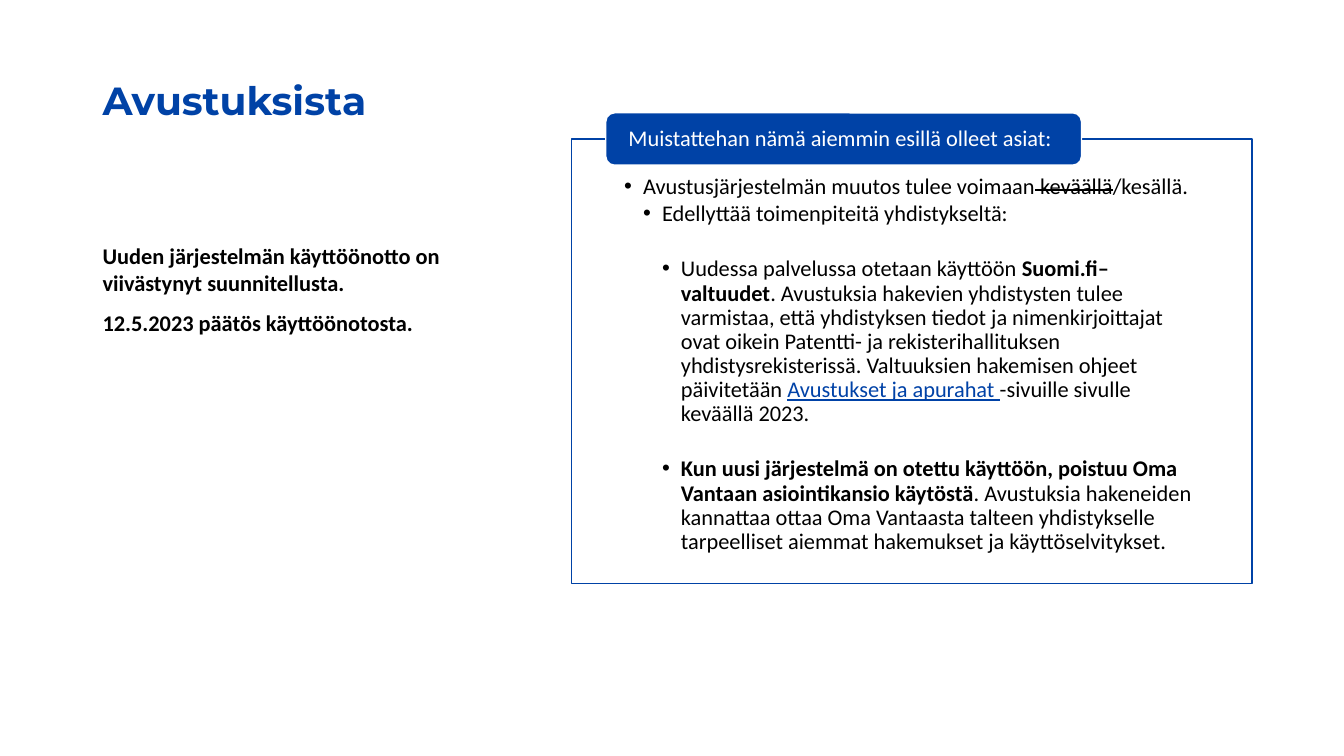
from dataclasses import dataclass

from lxml.etree import SubElement
from pptx import Presentation
from pptx.dml.color import RGBColor
from pptx.enum.shapes import MSO_SHAPE as Preset
from pptx.enum.text import MSO_ANCHOR as Anchor, MSO_AUTO_SIZE as AutoSize, PP_ALIGN as Align
from pptx.oxml.ns import qn
from pptx.util import Pt

BLUE = RGBColor(0x00, 0x42, 0xA6)
LINK_BLUE = RGBColor(0x00, 0x42, 0xA7)
BLACK = RGBColor(0x00, 0x00, 0x00)
WHITE = RGBColor(0xFF, 0xFF, 0xFF)
BODY_FONT = "Calibri"
BODY_SIZE = 16
INDENT = 13.5


@dataclass(frozen=True)
class Span:
    text: str
    bold: bool = False
    strike: bool = False
    link: bool = False


@dataclass(frozen=True)
class Bullet:
    level: int
    spans: tuple[Span, ...]
    space_before: float = 0


@dataclass(frozen=True)
class Panel:
    preset: Preset
    box: tuple[float, float, float, float]
    fill: RGBColor
    line: RGBColor
    insets: tuple[float, float, float, float]
    anchor: Anchor


REMINDER_PANEL = Panel(Preset.RECTANGLE, (408.2, 99.4, 486, 317.5), WHITE, BLUE,
                       (37.7, 26, 37.7, 8.5), Anchor.TOP)
HEADING_PANEL = Panel(Preset.ROUNDED_RECTANGLE, (432.7, 80.6, 339.8, 37.4), BLUE, WHITE,
                      (14.4, 0, 14.4, 0), Anchor.MIDDLE)

DELAY_NOTES = (
    "Uuden järjestelmän käyttöönotto on viivästynyt suunnitellusta.",
    "12.5.2023 päätös käyttöönotosta.",
)

REMINDERS = (
    Bullet(1, (
        Span("Avustusjärjestelmän muutos tulee voimaan"),
        Span(" keväällä", strike=True),
        Span("/kesällä."),
    )),
    Bullet(2, (Span("Edellyttää toimenpiteitä yhdistykseltä:"),)),
    Bullet(3, (
        Span("Uudessa palvelussa otetaan käyttöön "),
        Span("Suomi.fi–valtuudet", bold=True),
        Span(". Avustuksia hakevien yhdistysten tulee varmistaa, että yhdistyksen tiedot ja "
             "nimenkirjoittajat ovat oikein Patentti- ja rekisterihallituksen "
             "yhdistysrekisterissä. Valtuuksien hakemisen ohjeet päivitetään "),
        Span("Avustukset ja apurahat ", link=True),
        Span("-sivuille sivulle keväällä 2023."),
    ), space_before=20),
    Bullet(3, (
        Span("Kun uusi järjestelmä on otettu käyttöön, poistuu Oma Vantaan asiointikansio "
             "käytöstä", bold=True),
        Span(". Avustuksia hakeneiden kannattaa ottaa Oma Vantaasta talteen yhdistykselle "
             "tarpeelliset aiemmat hakemukset ja käyttöselvitykset."),
    ), space_before=20),
)


def style_font(font, color: RGBColor, bold: bool = False,
               name: str = BODY_FONT, size: float = BODY_SIZE) -> None:
    font.name, font.size, font.bold = name, Pt(size), bold
    font.color.rgb = color


def add_panel(slide, panel: Panel):
    shape = slide.shapes.add_shape(panel.preset, *map(Pt, panel.box))
    shape.shadow.inherit = False
    shape.fill.solid()
    shape.fill.fore_color.rgb = panel.fill
    shape.line.color.rgb = panel.line
    shape.line.width = Pt(1)
    frame = shape.text_frame
    frame.word_wrap = True
    frame.vertical_anchor = panel.anchor
    (frame.margin_left, frame.margin_top,
     frame.margin_right, frame.margin_bottom) = map(Pt, panel.insets)
    return shape


def write_bullet(paragraph, bullet: Bullet) -> None:
    properties = paragraph._p.get_or_add_pPr()
    properties.set("marL", str(Pt(INDENT * bullet.level)))
    properties.set("indent", str(-Pt(INDENT)))
    SubElement(properties, qn("a:buFont"), typeface="Arial")
    SubElement(properties, qn("a:buChar"), char="•")
    paragraph.alignment = Align.LEFT
    paragraph.line_spacing = 0.9
    paragraph.space_after = Pt(2)
    if bullet.space_before:
        paragraph.space_before = Pt(bullet.space_before)
    for span in bullet.spans:
        run = paragraph.add_run()
        run.text = span.text
        style_font(run.font, LINK_BLUE if span.link else BLACK, span.bold)
        run.font.underline = span.link
        if span.strike:
            run._r.get_or_add_rPr().set("strike", "sngStrike")


def add_title(slide) -> None:
    title = slide.shapes.title
    title.left, title.top, title.width, title.height = map(Pt, (66.2, 39.6, 309.6, 51.8))
    frame = title.text_frame
    frame.text = "Avustuksista"
    frame.auto_size = AutoSize.NONE
    frame.vertical_anchor = Anchor.BOTTOM
    heading = frame.paragraphs[0]
    heading.alignment = Align.LEFT
    style_font(heading.runs[0].font, BLUE, True, "Montserrat", 28)


def add_delay_notes(slide) -> None:
    notes = slide.shapes.add_textbox(*map(Pt, (66.2, 169.2, 309.6, 293))).text_frame
    notes.word_wrap = True
    notes.text = "\n".join(DELAY_NOTES)
    for index, paragraph in enumerate(notes.paragraphs):
        if index:
            paragraph.space_before = Pt(10)
        style_font(paragraph.runs[0].font, BLACK, True)


def add_reminders(slide) -> None:
    panel = add_panel(slide, REMINDER_PANEL)
    fill_color = panel._element.spPr.find(f"{qn('a:solidFill')}/{qn('a:srgbClr')}")
    SubElement(fill_color, qn("a:alpha"), val="90000")
    frame = panel.text_frame
    for index, bullet in enumerate(REMINDERS):
        write_bullet(frame.add_paragraph() if index else frame.paragraphs[0], bullet)

    heading_frame = add_panel(slide, HEADING_PANEL).text_frame
    heading_frame.text = "Muistattehan nämä aiemmin esillä olleet asiat:"
    heading = heading_frame.paragraphs[0]
    heading.alignment = Align.LEFT
    heading.line_spacing = 0.9
    style_font(heading.runs[0].font, WHITE)


def main() -> None:
    presentation = Presentation()
    presentation.slide_width, presentation.slide_height = Pt(960), Pt(540)
    slide = presentation.slides.add_slide(presentation.slide_layouts.get_by_name("Title Only"))
    add_title(slide)
    add_delay_notes(slide)
    add_reminders(slide)
    presentation.save("out.pptx")


if __name__ == "__main__":
    main()
